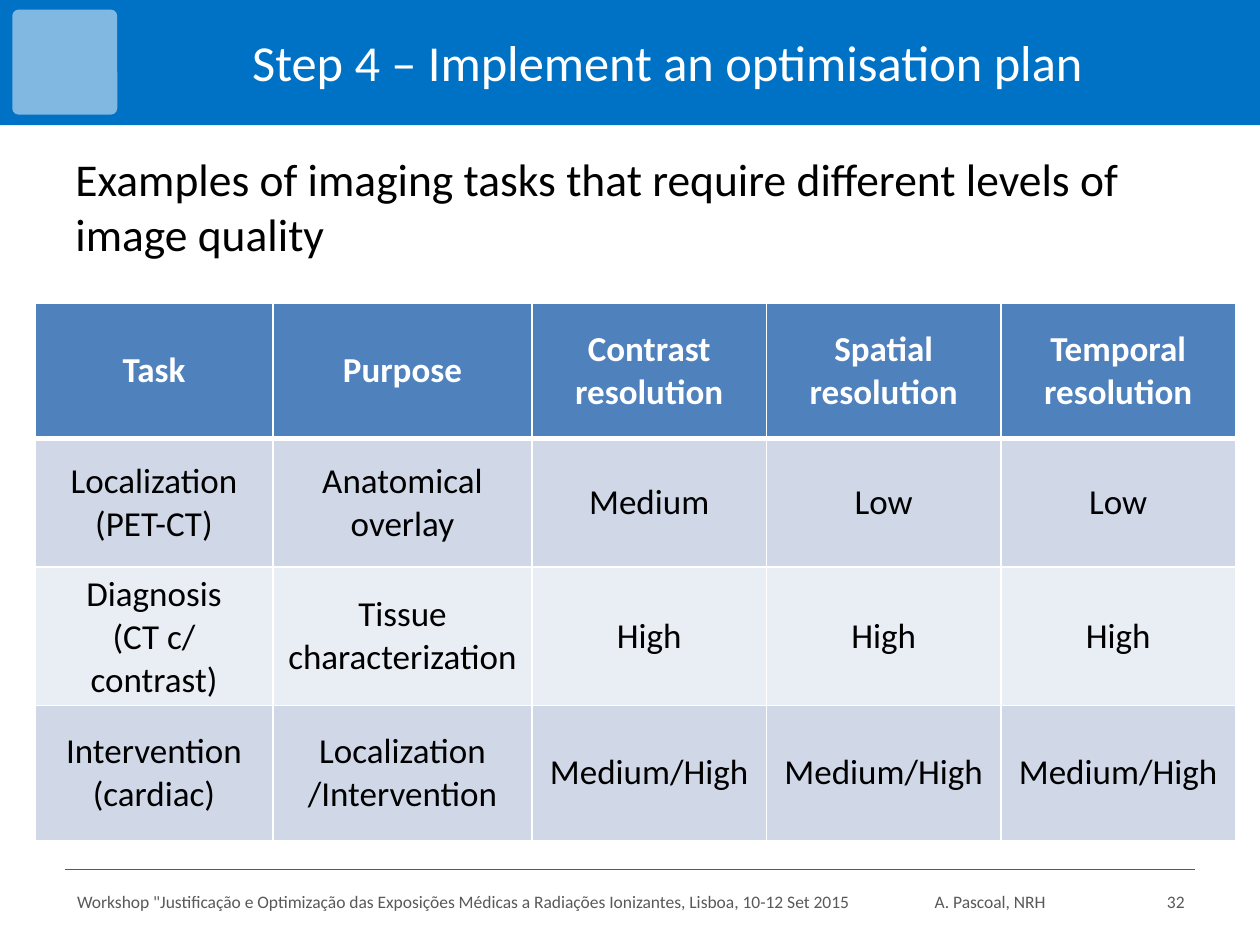
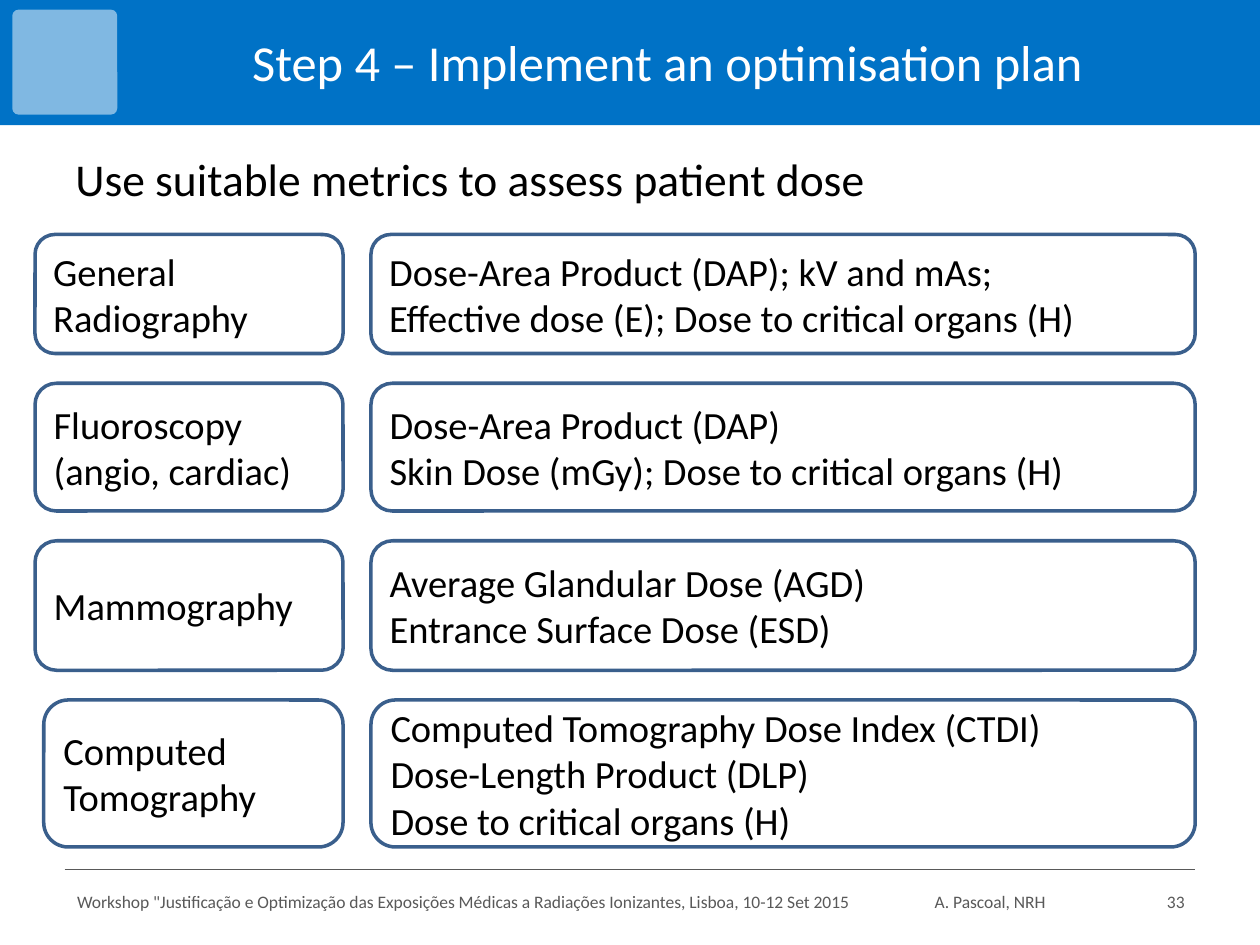
from dataclasses import dataclass

from lxml.etree import SubElement
from pptx import Presentation
from pptx.dml.color import RGBColor as Rgb
from pptx.enum.shapes import MSO_CONNECTOR as Line, MSO_SHAPE as Shape
from pptx.enum.text import MSO_ANCHOR as Anchor, PP_ALIGN as Align
from pptx.oxml import parse_xml
from pptx.oxml.ns import nsdecls, qn
from pptx.util import Pt


@dataclass(frozen=True)
class Theme:
    font: str = "Calibri"
    band: Rgb = Rgb(0x00, 0x72, 0xC6)
    white: Rgb = Rgb(0xFF, 0xFF, 0xFF)
    black: Rgb = Rgb(0x00, 0x00, 0x00)
    grey: Rgb = Rgb(0x59, 0x59, 0x59)
    edge: Rgb = Rgb(0x3A, 0x5F, 0x8C)
    header: Rgb = Rgb(0x4F, 0x81, 0xBD)
    dark: Rgb = Rgb(0xD0, 0xD8, 0xE8)
    light: Rgb = Rgb(0xE9, 0xED, 0xF4)
    title: float = 28.8
    lead: float = 26
    box: float = 22
    cell: float = 20
    foot: float = 10


theme = Theme()


def write(frame, text, size, color, align=Align.LEFT, anchor=Anchor.MIDDLE, bold=False):
    """Fill a text frame, one paragraph a line, in a single style."""
    frame.text = text
    frame.word_wrap = True
    frame.vertical_anchor = anchor
    for para in frame.paragraphs:
        para.alignment = align
        for run in para.runs:
            font = run.font
            font.name, font.size, font.bold = theme.font, Pt(size), bold
            font.color.rgb = color


def label(slide, place, *style, **more):
    """Add a text box at place (left, top, width, height)."""
    frame = slide.shapes.add_textbox(*map(Pt, place)).text_frame
    write(frame, *style, **more)
    return frame


deck = Presentation()
deck.slide_width, deck.slide_height = Pt(720), Pt(540)

# Shared frame: band, badge, title, lead, rule and footer
leads = [
    "Examples of imaging tasks that require different levels of image quality",
    "Use suitable metrics to assess patient dose",
]
slides = []
for number, lead in enumerate(leads, 32):
    slide = deck.slides.add_slide(deck.slide_layouts[6])
    slides.append(slide)

    band = slide.shapes.add_shape(Shape.RECTANGLE, 0, 0, Pt(720), Pt(71.5))
    badge = slide.shapes.add_shape(Shape.ROUNDED_RECTANGLE, Pt(7), Pt(5.5), Pt(60), Pt(60))
    badge.adjustments[0] = 0.06
    for shape, color in (band, theme.band), (badge, theme.white):
        shape.shadow.inherit = False
        shape.fill.solid()
        shape.fill.fore_color.rgb = color
        shape.line.fill.background()
    tint = badge.fill._xPr.find(qn("a:solidFill"))[0]
    SubElement(tint, qn("a:alpha"), val="50000")

    rule = slide.shapes.add_connector(Line.STRAIGHT, Pt(37), Pt(497), Pt(683), Pt(497))
    rule.line.color.rgb = theme.grey
    rule.line.width = Pt(0.75)
    SubElement(rule._element.spPr, qn("a:effectLst"))

    label(slide, (81, 13, 601, 44), "Step 4 – Implement an optimisation plan",
          theme.title, theme.white, Align.CENTER)
    body = label(slide, (36, 83, 648, 400), lead, theme.lead, theme.black, anchor=Anchor.TOP)
    body.paragraphs[0].space_before = Pt(4)

    notes = [
        (37, 480, 'Workshop "Justificação e Optimização das Exposições Médicas '
                  "a Radiações Ionizantes, Lisboa, 10-12 Set 2015", Align.LEFT),
        (527, 110, "A. Pascoal, NRH", Align.LEFT),
        (654, 30, str(number), Align.RIGHT),
    ]
    for left, width, text, align in notes:
        label(slide, (left, 500.5, width, 29), text, theme.foot, theme.grey, align)

first, second = slides

# Imaging tasks table
tasks = [
    ["Task", "Purpose", "Contrast resolution", "Spatial resolution", "Temporal resolution"],
    ["Localization (PET-CT)", "Anatomical overlay", "Medium", "Low", "Low"],
    ["Diagnosis\n(CT c/ contrast)", "Tissue characterization"] + ["High"] * 3,
    ["Intervention\n(cardiac)", "Localization\n/Intervention"] + ["Medium/High"] * 3,
]
widths = [136, 148, 134, 134, 134]
heights = [77, 73.5, 73.5, 77]
table = first.shapes.add_table(
    len(tasks), len(widths), Pt(20), Pt(173.5), Pt(sum(widths)), Pt(sum(heights))).table
for column, width in zip(table.columns, widths):
    column.width = Pt(width)
for row, height in zip(table.rows, heights):
    row.height = Pt(height)

for r, row in enumerate(tasks):
    head = r == 0
    fill = theme.header if head else (theme.light, theme.dark)[r % 2]
    edges = {"L": 1, "R": 1, "T": 3 if r == 1 else 1, "B": 3 if head else 1}
    for c, text in enumerate(row):
        cell = table.cell(r, c)
        write(cell.text_frame, text, theme.cell, theme.white if head else theme.black,
              Align.CENTER, bold=head)
        cell.vertical_anchor = Anchor.MIDDLE
        cell.fill.solid()
        cell.fill.fore_color.rgb = fill
        props = cell._tc.get_or_add_tcPr()
        for i, (side, weight) in enumerate(edges.items()):
            props.insert(i, parse_xml(
                f'<a:ln{side} {nsdecls("a")} w="{Pt(weight)}"><a:solidFill>'
                f'<a:srgbClr val="{theme.white}"/></a:solidFill></a:ln{side}>'))

# Dose metrics: exam on the left, its metrics on the right
exams = [
    (20, 68, "General\nRadiography",
     "Dose-Area Product (DAP); kV and mAs;\nEffective dose (E); Dose to critical organs (H)"),
    (20, 73, "Fluoroscopy\n(angio, cardiac)",
     "Dose-Area Product (DAP)\nSkin Dose (mGy); Dose to critical organs (H)"),
    (20, 74, "Mammography",
     "Average Glandular Dose (AGD)\nEntrance Surface Dose (ESD)"),
    (25, 84, "Computed Tomography",
     "Computed Tomography Dose Index (CTDI)\nDose-Length Product (DLP)\n"
     "Dose to critical organs (H)"),
]
top, gap = 134, 17
for left, height, exam, metrics in exams:
    for start, end, text in (left, 196, exam), (212, 683, metrics):
        box = second.shapes.add_shape(
            Shape.ROUNDED_RECTANGLE, Pt(start), Pt(top), Pt(end - start), Pt(height))
        box.shadow.inherit = False
        box.fill.background()
        box.line.color.rgb = theme.edge
        box.line.width = Pt(2)
        write(box.text_frame, text, theme.box, theme.black)
    top += height + gap

deck.save("out.pptx")
